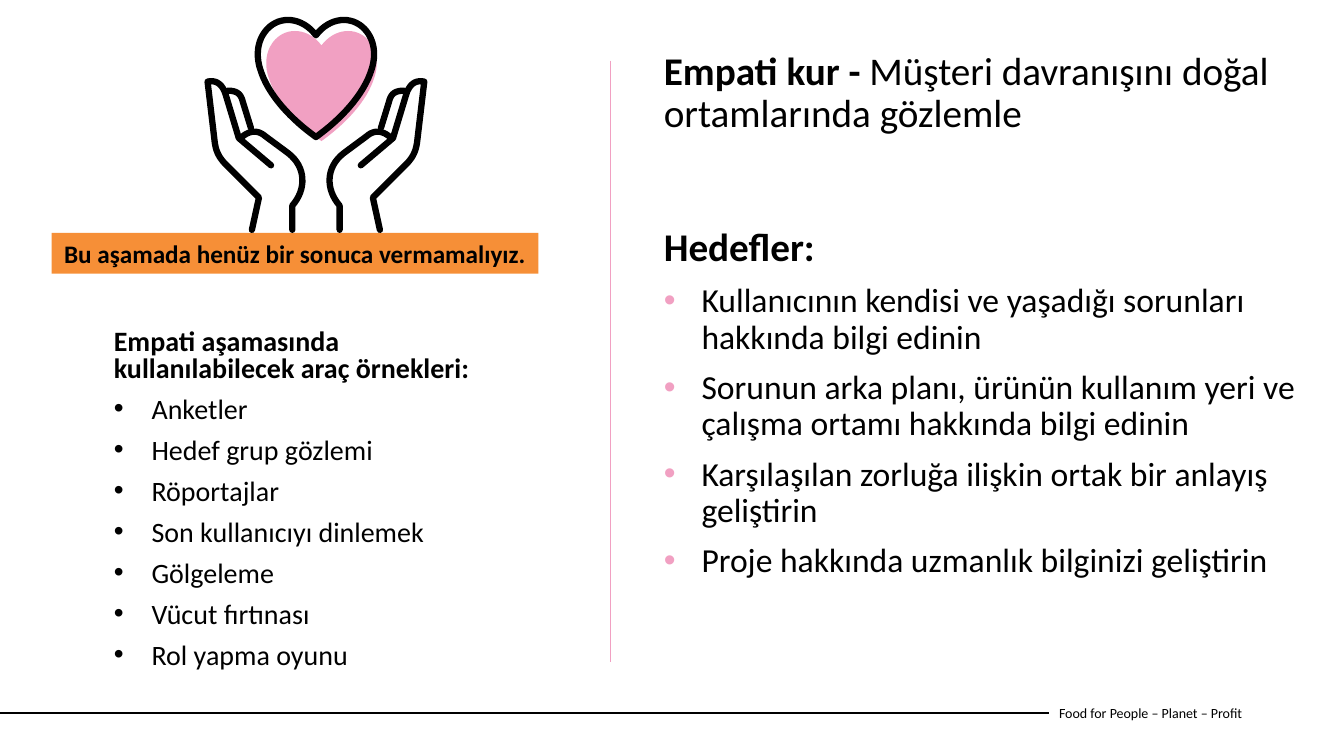
"""Build the empathy phase slide with its goals, tools and heart-in-hands icon."""
import pptx
import pptx.dml.color
import pptx.enum.shapes
import pptx.enum.text
import pptx.oxml
import pptx.oxml.ns
import pptx.util
from pptx.util import Cm

BLACK, PINK, ORANGE = "000000", "F1A0C2", "F68F37"
ICON_UNIT = 0.0254
MIRROR_SUM = 627


def color(hex_code):
    return pptx.dml.color.RGBColor.from_string(hex_code)


def trace(steps):
    """Return the points of a path; a step of six numbers is a Bézier curve."""
    points = [steps[0]]
    for step in steps[1:]:
        if len(step) == 2:
            points.append(step)
            continue
        start = points[-1]
        for index in range(1, 17):
            t = index / 16
            weights = ((1 - t) ** 3, 3 * t * (1 - t) ** 2, 3 * t * t * (1 - t), t ** 3)
            points.append(tuple(
                sum(weight * value for weight, value in zip(weights, (start[axis], *step[axis::2])))
                for axis in (0, 1)))
    return points


presentation = pptx.Presentation()
presentation.slide_width = Cm(33.87)
presentation.slide_height = Cm(19.05)
slide = presentation.slides.add_slide(presentation.slide_layouts[6])

rules = [
    (0, 17.96, 26.44, 17.96, BLACK, 1.5),
    (15.39, 1.53, 15.39, 16.67, PINK, 0.5),
]
for left, top, right, bottom, line_color, width in rules:
    connector = slide.shapes.add_connector(
        pptx.enum.shapes.MSO_CONNECTOR.STRAIGHT, Cm(left), Cm(top), Cm(right), Cm(bottom))
    connector.line.color.rgb = color(line_color)
    connector.line.width = pptx.util.Pt(width)
    pptx.oxml.ns.qn("a:effectLst")
    connector._element.spPr.append(
        connector._element.spPr.makeelement(pptx.oxml.ns.qn("a:effectLst"), {}))

banner = slide.shapes.add_shape(
    pptx.enum.shapes.MSO_SHAPE.RECTANGLE, Cm(1.3), Cm(5.87), Cm(12.27), Cm(1.03))
banner.shadow.inherit = False
banner.fill.solid()
banner.fill.fore_color.rgb = color(ORANGE)
banner.line.fill.background()

goals = [
    "Kullanıcının kendisi ve yaşadığı sorunları hakkında bilgi edinin",
    "Sorunun arka planı, ürünün kullanım yeri ve çalışma ortamı hakkında bilgi edinin",
    "Karşılaşılan zorluğa ilişkin ortak bir anlayış geliştirin",
    "Proje hakkında uzmanlık bilginizi geliştirin",
]
tools = [
    "Anketler",
    "Hedef grup gözlemi",
    "Röportajlar",
    "Son kullanıcıyı dinlemek",
    "Gölgeleme",
    "Vücut fırtınası",
    "Rol yapma oyunu",
]
footer_box = slide.shapes.add_textbox(Cm(26.44), Cm(17.45), Cm(6.93), Cm(1.02))
goals_box = slide.shapes.add_textbox(Cm(16.48), Cm(5.61), Cm(16.81), Cm(10.34))
title_box = slide.shapes.add_textbox(Cm(16.48), Cm(1.17), Cm(16.28), Cm(3.18))
tools_box = slide.shapes.add_textbox(Cm(2.62), Cm(8.2), Cm(10.67), Cm(9.55))

MIDDLE = pptx.enum.text.MSO_ANCHOR.MIDDLE
TOP = pptx.enum.text.MSO_ANCHOR.TOP
texts = [
    (footer_box, MIDDLE, "", 10, ["Food for People – Planet – Profit"], 10, None, None),
    (banner, MIDDLE, "Bu aşamada henüz bir sonuca vermamalıyız.", 18, [], 18, None, None),
    (title_box, TOP, "Empati kur - ", 28, [], 28, 0.9, None),
    (goals_box, TOP, "Hedefler:", 28, goals, 24, 0.9, PINK),
    (tools_box, TOP, "Empati aşamasında kullanılabilecek araç örnekleri:", 20, tools, 20, 0.8, BLACK),
]
for shape, anchor, heading, heading_size, items, item_size, spacing, bullet_color in texts:
    frame = shape.text_frame
    frame.word_wrap = True
    frame.vertical_anchor = anchor
    frame.text = "\n".join(filter(None, [heading, *items]))
    if shape is title_box:
        frame.paragraphs[0].add_run().text = "Müşteri davranışını doğal ortamlarında gözlemle"
    for number, paragraph in enumerate(frame.paragraphs):
        is_heading = bool(heading) and number == 0
        if spacing:
            paragraph.line_spacing = spacing
            paragraph.space_before = pptx.util.Pt(10)
        if bullet_color and not is_heading:
            properties = paragraph._p.get_or_add_pPr()
            properties.set("marL", str(Cm(0.95)))
            properties.set("indent", str(-Cm(0.95)))
            namespace = pptx.oxml.ns.nsdecls("a")
            for xml in (
                f'<a:buClr {namespace}><a:srgbClr val="{bullet_color}"/></a:buClr>',
                f'<a:buFont {namespace} typeface="Arial"/>',
                f'<a:buChar {namespace} char="•"/>',
            ):
                properties.append(pptx.oxml.parse_xml(xml))
        for position, run in enumerate(paragraph.runs):
            run.font.name = "Calibri"
            run.font.size = pptx.util.Pt(heading_size if is_heading else item_size)
            run.font.bold = is_heading and position == 0
            run.font.color.rgb = color(BLACK)
banner.text_frame.word_wrap = False
banner.text_frame.paragraphs[0].alignment = pptx.enum.text.PP_ALIGN.CENTER

half_heart = trace([
    (313.5, 35), (300, 17, 278, 15, 265, 29), (255, 40, 254, 55, 258, 68),
    (266, 95, 290, 119, 313.5, 136)])
heart = half_heart + [(MIRROR_SUM - x, y) for x, y in reversed(half_heart)]
pink_heart = [(319 + 0.95 * (x - 313.5), 140 + 0.94 * (y - 136)) for x, y in heart]
left_hand = [
    trace([(250, 228), (257, 196), (224, 163), (216, 155, 214, 148, 213, 140), (206, 81),
           (215, 79, 221, 84, 224, 94), (237, 137), (269, 164)]),
    trace([(226, 90), (235, 90, 239, 93, 241, 101), (249, 127)]),
    trace([(239, 137), (246, 130, 255, 128, 263, 135), (286, 152),
           (304, 166, 304, 188, 290, 204), (290, 228)]),
]
right_hand = [[(MIRROR_SUM - x, y) for x, y in stroke] for stroke in left_hand]

icon_parts = [(pink_heart, True, PINK)]
icon_parts += [(stroke, False, None) for stroke in left_hand + right_hand]
icon_parts.append((heart, True, None))
for points, closed, fill_color in icon_parts:
    outline = [(Cm(x * ICON_UNIT), Cm(y * ICON_UNIT)) for x, y in points]
    builder = slide.shapes.build_freeform(*outline[0])
    builder.add_line_segments(outline[1:], close=closed)
    shape = builder.convert_to_shape()
    shape.shadow.inherit = False
    if fill_color:
        shape.fill.solid()
        shape.fill.fore_color.rgb = color(fill_color)
        shape.line.fill.background()
    else:
        shape.fill.background()
        shape.line.color.rgb = color(BLACK)
        shape.line.width = pptx.util.Pt(4.5)
        line = shape.line._get_or_add_ln()
        line.set("cap", "rnd")
        line.append(line.makeelement(pptx.oxml.ns.qn("a:round"), {}))

presentation.save("out.pptx")
